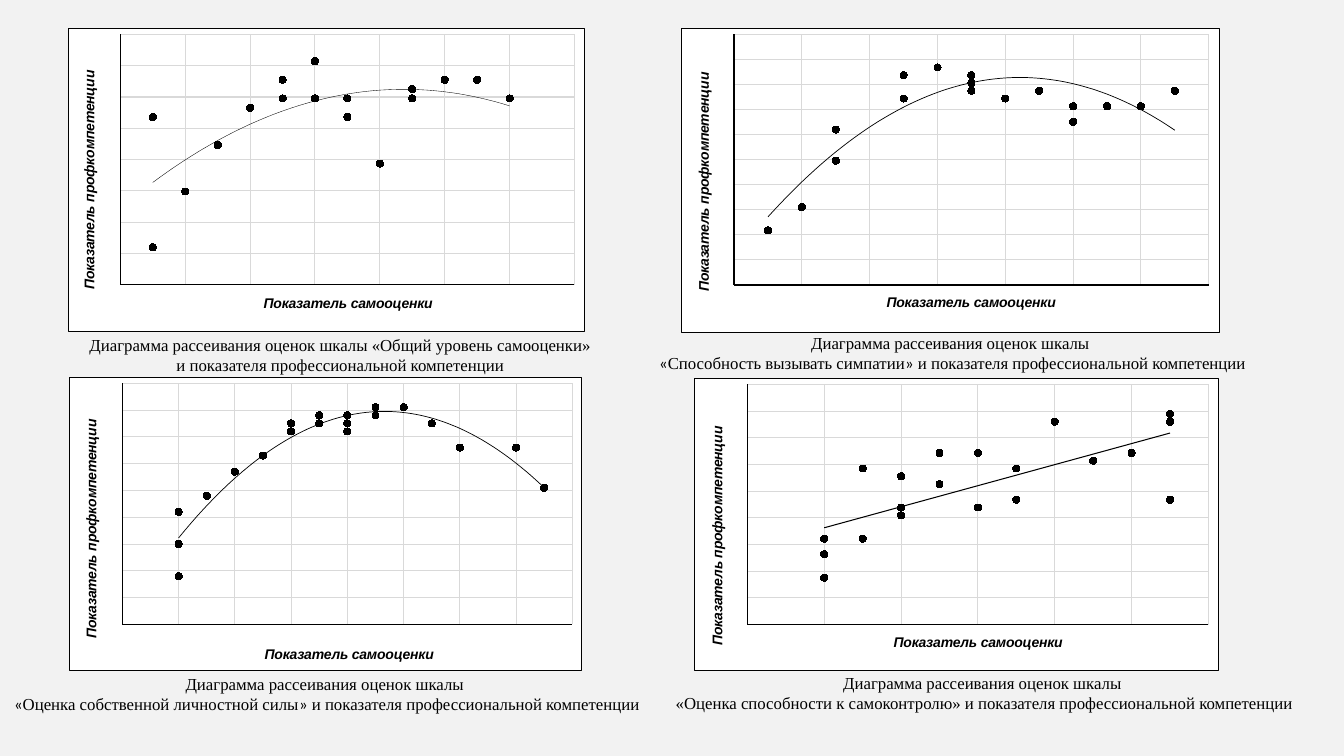
from dataclasses import dataclass
from itertools import groupby

from lxml import etree
from pptx import Presentation
from pptx.chart.data import XyChartData
from pptx.dml.color import RGBColor
from pptx.enum.chart import XL_CHART_TYPE, XL_MARKER_STYLE, XL_TICK_LABEL_POSITION, XL_TICK_MARK
from pptx.enum.text import MSO_ANCHOR, PP_ALIGN
from pptx.oxml import parse_xml
from pptx.oxml.ns import nsdecls, qn
from pptx.util import Emu, Pt

SCATTER = XL_CHART_TYPE.XY_SCATTER
CIRCLE = XL_MARKER_STYLE.CIRCLE
NO_LABELS = XL_TICK_LABEL_POSITION.NONE
NO_TICKS = XL_TICK_MARK.NONE
CENTER = PP_ALIGN.CENTER
TOP, MIDDLE = MSO_ANCHOR.TOP, MSO_ANCHOR.MIDDLE
PAGE_WIDTH, PAGE_HEIGHT = 1344, 756
EMU_PER_PX = 914400 / 100.8


@dataclass(frozen=True)
class Theme:
    page: str = "F2F2F2"
    panel: str = "FFFFFF"
    ink: str = "000000"
    grid: str = "D9D9D9"
    serif: str = "Times New Roman"
    sans: str = "Arial"
    quotes: str = "Calibri"
    caption_size: float = 12
    chart_size: float = 10
    marker_size: int = 5
    axis_width: float = 1.25
    grid_width: float = 0.75


THEME = Theme()
X_TITLE = "Показатель самооценки"
Y_TITLE = "Показатель профкомпетенции"
HEADING = "Диаграмма рассеивания оценок шкалы"

# Boxes are left, top, width, height; title spots are left, top; axes are min, step, count.
PANELS = [
    dict(box=(68, 28, 517, 304), plot=(120, 34, 455, 251), x_spot=(261, 292), y_spot=(77, 68),
         x_axis=(29, 2, 7), y_axis=(76, 3.36, 8), border=0.75, trend="poly", trend_width=0.25,
         x_values=[35, 38, 40, 38, 37, 34, 36, 31, 35, 38, 32, 35, 39, 34, 34, 36, 41, 30, 33, 30],
         y_values=[96, 96, 98, 97, 89, 96, 96, 86, 100, 96,
                   91, 96, 98, 98, 96, 94, 96, 94, 95, 80]),
    dict(box=(681, 28, 538, 304), plot=(734, 34, 475, 251), x_spot=(884, 291), y_spot=(692, 70),
         x_axis=(29, 2, 7), y_axis=(72, 3.23, 10), border=0.25, trend="poly", trend_width=0.5,
         x_values=[36, 36, 40, 39, 39, 37, 34, 36, 38, 41, 35, 32, 35, 36, 32, 30, 42, 36, 34, 31],
         y_values=[97, 99, 95, 95, 93, 96, 99, 98, 97, 95,
                   100, 92, 100, 99, 88, 79, 97, 97, 96, 82]),
    dict(box=(69, 377, 513, 294), plot=(122, 383, 451, 242), x_spot=(262, 643), y_spot=(79, 417),
         x_axis=(30, 2, 8), y_axis=(73, 3.33, 9), border=0.75, trend="poly", trend_width=0.5,
         x_values=[38, 39, 36, 41, 38, 42, 38, 40, 44, 37, 39, 33, 37, 32, 32, 32, 45, 35, 36, 34],
         y_values=[99, 99, 97, 98, 98, 95, 97, 100, 95, 98,
                   100, 89, 99, 83, 79, 87, 90, 94, 98, 92]),
    dict(box=(694, 378, 525, 293), plot=(747, 384, 462, 241), x_spot=(891, 631), y_spot=(705, 424),
         x_axis=(30, 2, 6), y_axis=(73, 3.42, 9), border=0.75, trend="linear", trend_width=0.75,
         x_values=[38, 34, 41, 39, 41, 35, 34, 34, 40, 37, 32, 37, 36, 36, 33, 33, 41, 35, 32, 32],
         y_values=[99, 88, 99, 94, 89, 95, 92, 87, 95, 89,
                   82, 93, 95, 88, 93, 84, 100, 91, 79, 84]),
]
CAPTIONS = [
    dict(box=(-288, 330, 1261, 50), anchor=TOP, wrap=True, quote_font=THEME.serif,
         lines=[HEADING + " «Общий уровень самооценки» ",
                "и показателя профессиональной компетенции "]),
    dict(box=(642, 328, 617, 50), anchor=MIDDLE, wrap=False, quote_font=THEME.quotes,
         lines=[HEADING, " «Способность вызывать симпатии» и показателя профессиональной компетенции"]),
    dict(box=(-497, 669, 1648, 50), anchor=MIDDLE, wrap=True, quote_font=THEME.quotes,
         lines=[HEADING + " ",
                "«Оценка собственной личностной силы» и показателя профессиональной компетенции"]),
    dict(box=(352, 668, 1261, 50), anchor=TOP, wrap=True, quote_font=THEME.serif,
         lines=[HEADING,
                " «Оценка способности к самоконтролю» и показателя профессиональной компетенции"]),
]


def px(length):
    return Emu(round(length * EMU_PER_PX))


def set_font(font, **values):
    font.color.rgb = RGBColor.from_string(THEME.ink)
    for name, value in values.items():
        setattr(font, name, value)


def set_line(line, color, width):
    line.color.rgb = RGBColor.from_string(color)
    line.width = Pt(width)


def outline_xml(color, width):
    return (f'<a:ln w="{Pt(width)}"><a:solidFill><a:srgbClr val="{color}"/>'
            '</a:solidFill></a:ln>')


def manual_layout(panel_box, spot):
    """Layout element for a spot on the page, as fractions of its panel."""
    left, top, width, height = panel_box
    values = {"xMode": "edge", "yMode": "edge",
              "x": round((spot[0] - left) / width, 4), "y": round((spot[1] - top) / height, 4)}
    if len(spot) == 4:
        values = {"layoutTarget": "inner", **values,
                  "w": round(spot[2] / width, 4), "h": round(spot[3] / height, 4)}
    layout = etree.Element(qn("c:layout"))
    manual = etree.SubElement(layout, qn("c:manualLayout"))
    for name, value in values.items():
        etree.SubElement(manual, qn(f"c:{name}")).set("val", str(value))
    return layout


def replace_layout(parent, layout, position):
    for old in parent.findall(qn("c:layout")):
        parent.remove(old)
    parent.insert(position, layout)


def style_axis(axis, scale, title, layout, rotation):
    low, step, count = scale
    settings = dict(minimum_scale=low, maximum_scale=round(low + step * count, 2), major_unit=step,
                    tick_label_position=NO_LABELS, major_tick_mark=NO_TICKS,
                    minor_tick_mark=NO_TICKS, has_major_gridlines=True)
    for name, value in settings.items():
        setattr(axis, name, value)
    set_line(axis.format.line, THEME.ink, THEME.axis_width)
    set_line(axis.major_gridlines.format.line, THEME.grid, THEME.grid_width)
    frame = axis.axis_title.text_frame
    frame.text = title
    set_font(frame.paragraphs[0].runs[0].font, name=THEME.sans, size=Pt(THEME.chart_size),
             bold=True, italic=True)
    element = axis.axis_title.element
    element.find(".//" + qn("a:bodyPr")).set("rot", str(rotation))
    replace_layout(element, layout, 1)


def add_trend(chart, kind, width):
    order = '<c:order val="2"/>' if kind == "poly" else ""
    trend = parse_xml(
        f'<c:trendline {nsdecls("c", "a")}><c:spPr>{outline_xml(THEME.ink, width)}</c:spPr>'
        f'<c:trendlineType val="{kind}"/>{order}<c:dispRSqr val="0"/><c:dispEq val="0"/>'
        '</c:trendline>')
    chart.element.find(".//" + qn("c:xVal")).addprevious(trend)


def add_scatter(page, box, plot, x_spot, y_spot, x_axis, y_axis, border, trend, trend_width,
                x_values, y_values):
    data = XyChartData()
    series_data = data.add_series("Series 1")
    for x, y in zip(x_values, y_values):
        series_data.add_data_point(x, y)
    chart = page.shapes.add_chart(SCATTER, *map(px, box), data).chart
    chart.has_legend = False
    chart.has_title = False
    set_font(chart.font, name=THEME.serif, size=Pt(THEME.chart_size))
    chart.plots[0].vary_by_categories = False
    series = chart.plots[0].series[0]
    series.smooth = False
    series.format.line.fill.background()
    series.marker.style = CIRCLE
    series.marker.size = THEME.marker_size
    series.marker.format.fill.solid()
    series.marker.format.fill.fore_color.rgb = RGBColor.from_string(THEME.ink)
    set_line(series.marker.format.line, THEME.ink, THEME.grid_width)
    style_axis(chart.category_axis, x_axis, X_TITLE, manual_layout(box, x_spot), 0)
    style_axis(chart.value_axis, y_axis, Y_TITLE, manual_layout(box, y_spot), -5400000)
    add_trend(chart, trend, trend_width)
    replace_layout(chart.element.find(".//" + qn("c:plotArea")), manual_layout(box, plot), 0)
    chart.element.find(qn("c:chart")).addnext(parse_xml(
        f'<c:spPr {nsdecls("c", "a")}><a:solidFill><a:srgbClr val="{THEME.panel}"/>'
        f'</a:solidFill>{outline_xml(THEME.ink, border)}</c:spPr>'))


def add_caption(page, box, anchor, wrap, quote_font, lines):
    frame = page.shapes.add_textbox(*map(px, box)).text_frame
    frame.word_wrap = wrap
    frame.vertical_anchor = anchor
    for index, line in enumerate(lines):
        para = frame.add_paragraph() if index else frame.paragraphs[0]
        para.alignment = CENTER
        for is_quote, marks in groupby(line, lambda mark: mark in "«»"):
            span = para.add_run()
            span.text = "".join(marks)
            set_font(span.font, name=quote_font if is_quote else THEME.serif,
                     size=Pt(THEME.caption_size))


def main():
    deck = Presentation()
    deck.slide_width, deck.slide_height = px(PAGE_WIDTH), px(PAGE_HEIGHT)
    page = deck.slides.add_slide(deck.slide_layouts[6])
    page.background.fill.solid()
    page.background.fill.fore_color.rgb = RGBColor.from_string(THEME.page)
    for panel in PANELS:
        add_scatter(page, **panel)
    for caption in CAPTIONS:
        add_caption(page, **caption)
    deck.save("out.pptx")


if __name__ == "__main__":
    main()
